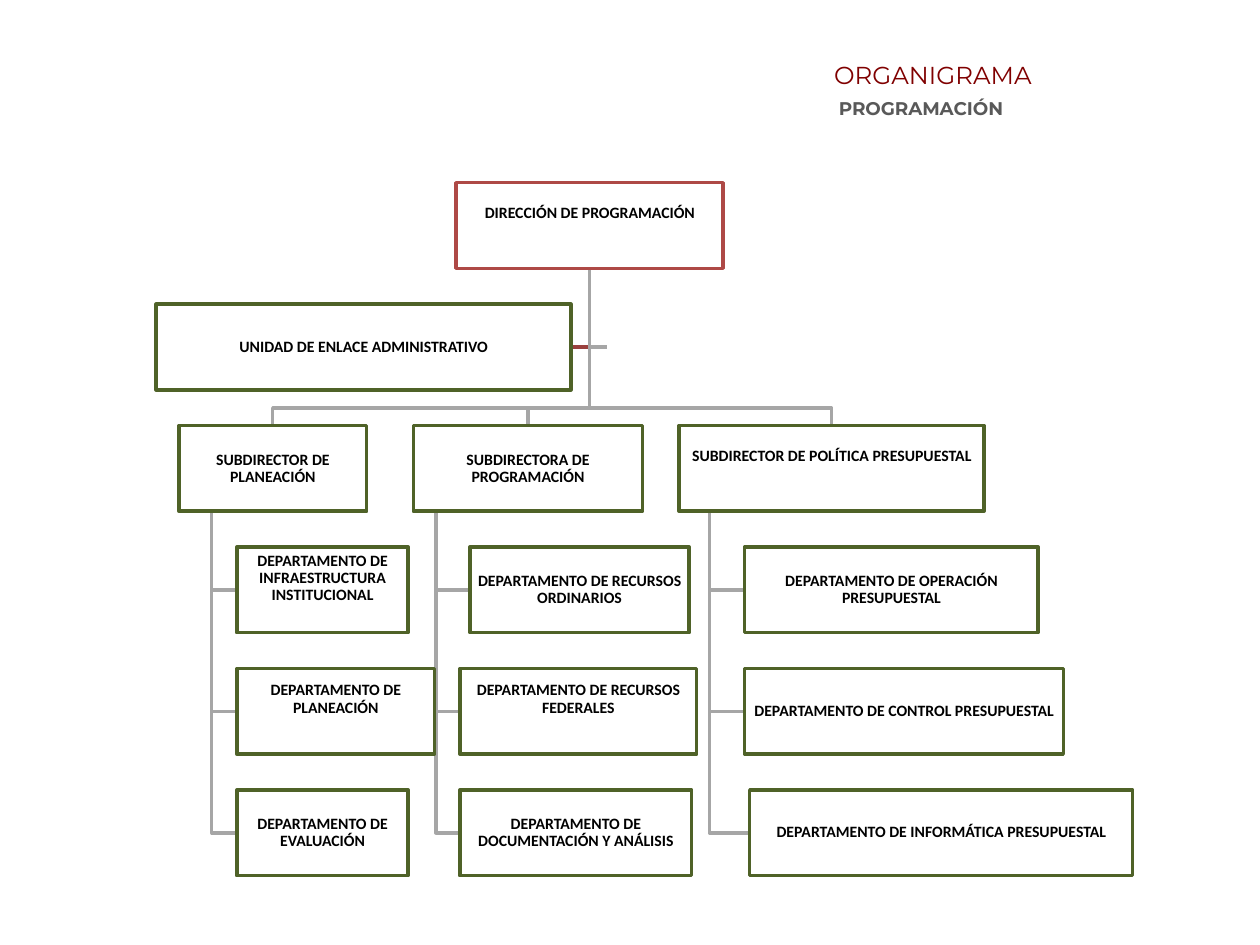
from pptx import Presentation
from pptx.dml.color import RGBColor
from pptx.enum.shapes import MSO_SHAPE
from pptx.enum.text import MSO_ANCHOR, PP_ALIGN
from pptx.util import Inches, Pt

RECTANGLE = MSO_SHAPE.RECTANGLE
MIDDLE = MSO_ANCHOR.MIDDLE
CENTER = PP_ALIGN.CENTER

RED, DARK_RED, GREEN, GRAY = "AE4946", "9A403E", "4F6228", "A6A6A6"

# text, left, top, width, height, size, colour, bold
HEADINGS = [
    ("ORGANIGRAMA", 5.41, 0.43, 3.99, 0.34, 14, "800000", False),
    ("PROGRAMACIÓN", 4.62, 0.72, 5.38, 0.28, 10.5, "595959", True),
]

# Boxes: text, left, width, whether the text sits above the middle
DIRECTOR = ("DIRECCIÓN DE PROGRAMACIÓN", 3.62, 2.12, True)
ASSISTANT = ("UNIDAD DE ENLACE ADMINISTRATIVO", 1.24, 3.29, False)
BRANCHES = [
    {"head": ("SUBDIRECTOR DE PLANEACIÓN", 1.42, 1.49, False),
     "trunk": 1.68,
     "departments": [
         ("DEPARTAMENTO DE INFRAESTRUCTURA INSTITUCIONAL", 1.88, 1.36, True),
         ("DEPARTAMENTO DE PLANEACIÓN", 1.88, 1.57, True),
         ("DEPARTAMENTO DE EVALUACIÓN", 1.88, 1.36, False)]},
    {"head": ("SUBDIRECTORA DE PROGRAMACIÓN", 3.28, 1.82, False),
     "trunk": 3.46,
     "departments": [
         ("DEPARTAMENTO DE RECURSOS ORDINARIOS", 3.73, 1.74, False),
         ("DEPARTAMENTO DE RECURSOS FEDERALES", 3.65, 1.88, True),
         ("DEPARTAMENTO DE DOCUMENTACIÓN Y ANÁLISIS", 3.65, 1.84, False)]},
    {"head": ("SUBDIRECTOR DE POLÍTICA PRESUPUESTAL", 5.39, 2.42, True),
     "trunk": 5.63,
     "departments": [
         ("DEPARTAMENTO DE OPERACIÓN PRESUPUESTAL", 5.91, 2.33, False),
         ("DEPARTAMENTO DE CONTROL PRESUPUESTAL", 5.91, 2.53, False),
         ("DEPARTAMENTO DE INFORMÁTICA PRESUPUESTAL", 5.95, 3.04, False)]},
]

FIRST_TOP, LAST_TOP, ROWS = 1.45, 6.27, 6
BOX_H = 0.68
INSET, RAISED_INSET = 0.01, 0.2
BUS_GAP = 0.14  # from the horizontal line down to the heads, and beside the stem

prs = Presentation()
prs.slide_width, prs.slide_height = Inches(10), Inches(7.5)
slide = prs.slides.add_slide(prs.slide_layouts[6])


def rgb(color):
    return RGBColor.from_string(color)


def row_top(row):
    return FIRST_TOP + row * (LAST_TOP - FIRST_TOP) / (ROWS - 1)


def row_middle(row):
    return row_top(row) + BOX_H / 2


def row_bottom(row):
    return row_top(row) + BOX_H


def box_center(box):
    return box[1] + box[2] / 2


def write(sp, text, font, size, color, bold):
    tf = sp.text_frame
    tf.word_wrap = True
    tf.text = text
    p = tf.paragraphs[0]
    p.alignment = CENTER
    f = p.runs[0].font
    f.name, f.size, f.bold = font, Pt(size), bold
    f.color.rgb = rgb(color)
    return tf


def draw_line(points, color=GRAY):
    """Draw an open polyline through points given in inches."""
    emu = [(Inches(x), Inches(y)) for x, y in points]
    builder = slide.shapes.build_freeform(*emu[0])
    builder.add_line_segments(emu[1:], close=False)
    sp = builder.convert_to_shape()
    sp.shadow.inherit = False
    sp.fill.background()
    sp.line.color.rgb = rgb(color)
    sp.line.width = Pt(2)


def draw_box(box, row, color=GREEN):
    text, left, width, raised = box
    sp = slide.shapes.add_shape(RECTANGLE, Inches(left), Inches(row_top(row)),
                                Inches(width), Inches(BOX_H))
    sp.shadow.inherit = False
    sp.fill.solid()
    sp.fill.fore_color.rgb = rgb("FFFFFF")
    sp.line.color.rgb = rgb(color)
    sp.line.width = Pt(2)
    tf = write(sp, text, "Calibri", 9, "000000", True)
    tf.vertical_anchor = MIDDLE
    tf.margin_left = tf.margin_right = tf.margin_top = Inches(INSET)
    tf.margin_bottom = Inches(RAISED_INSET if raised else INSET)
    tf.paragraphs[0].line_spacing = 0.9


for text, left, top, width, height, size, color, bold in HEADINGS:
    tb = slide.shapes.add_textbox(Inches(left), Inches(top), Inches(width), Inches(height))
    write(tb, text, "Montserrat", size, color, bold)

# Lines first, so that the boxes cover their ends
stem = box_center(DIRECTOR)
stem_top = (stem, row_bottom(0))
for end, color in ((stem + BUS_GAP, GRAY), (ASSISTANT[1] + ASSISTANT[2], DARK_RED)):
    draw_line([stem_top, (stem, row_middle(1)), (end, row_middle(1))], color)

bus = row_top(2) - BUS_GAP
for branch in BRANCHES:
    head_x, trunk = box_center(branch["head"]), branch["trunk"]
    draw_line([stem_top, (stem, bus), (head_x, bus), (head_x, row_top(2))])
    for row, department in enumerate(branch["departments"], 3):
        y = row_middle(row)
        draw_line([(trunk, row_bottom(2)), (trunk, y), (department[1], y)])

draw_box(DIRECTOR, 0, RED)
draw_box(ASSISTANT, 1)
for branch in BRANCHES:
    for row, box in enumerate([branch["head"], *branch["departments"]], 2):
        draw_box(box, row)

prs.save("out.pptx")
